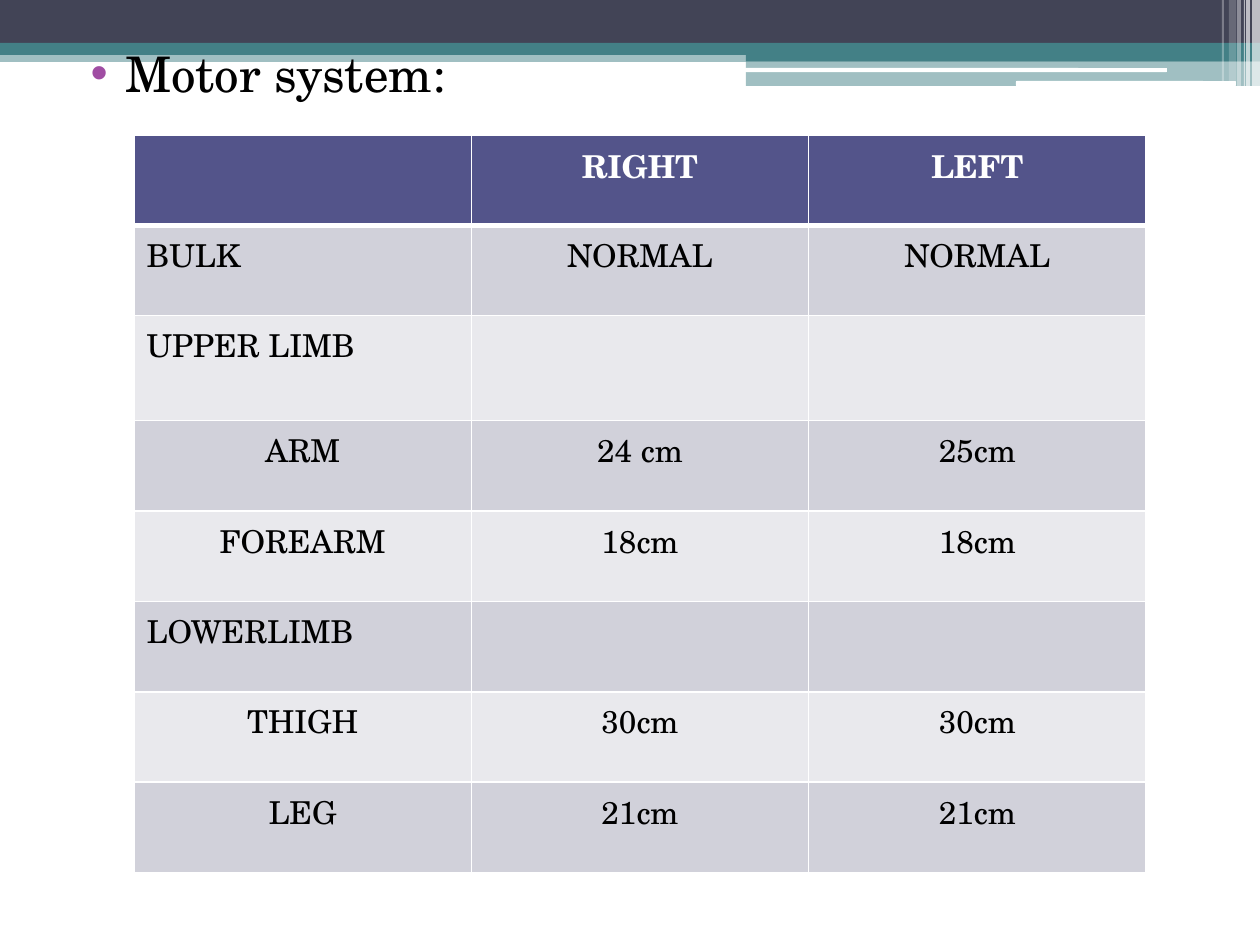
from lxml.etree import SubElement
from pptx import Presentation
from pptx.dml.color import RGBColor
from pptx.enum.shapes import MSO_SHAPE
from pptx.enum.text import PP_ALIGN
from pptx.oxml import parse_xml
from pptx.oxml.ns import nsdecls, qn
from pptx.util import Inches, Pt

PX = Inches(10) / 1260
FONT = "TeX Gyre Schola"
WHITE = RGBColor(0xFF, 0xFF, 0xFF)
BLACK = RGBColor(0x00, 0x00, 0x00)
SLATE = RGBColor(0x42, 0x44, 0x56)
TEAL = RGBColor(0x43, 0x80, 0x86)
PURPLE = RGBColor(0xA0, 0x4D, 0xA3)
INDIGO = RGBColor(0x53, 0x54, 0x8A)
BAND_DARK = RGBColor(0xD1, 0xD1, 0xDA)
BAND_LIGHT = RGBColor(0xE9, 0xE9, 0xED)

BARS = [
    (0, 50, 1260, 12, TEAL, 50),
    (0, 0, 1260, 43, SLATE, 100),
    (0, 43, 1260, 12, TEAL, 100),
    (746, 49, 514, 12, TEAL, 100),
    (746, 61, 514, 25, TEAL, 50),
]
GROOVES = [(745, 68, 422, 4), (1016, 81, 220, 5)]
STRIPES = [
    (1252, 8, 86, 65),
    (1246, 4, 86, 65),
    (1244, 1, 86, 60),
    (1237, 4, 86, 40),
    (1229, 7, 81, 20),
    (1222, 2, 81, 30),
]
MEASUREMENTS = [
    ("", "RIGHT", "LEFT"),
    ("BULK", "NORMAL", "NORMAL"),
    ("UPPER LIMB", "", ""),
    ("ARM", "24 cm", "25cm"),
    ("FOREARM", "18cm", "18cm"),
    ("LOWERLIMB", "", ""),
    ("THIGH", "30cm", "30cm"),
    ("LEG", "21cm", "21cm"),
]
LEFT_ALIGNED = {"BULK", "UPPER LIMB", "LOWERLIMB"}
TALL_ROW, TALL_HEIGHT = 2, 105


def px(length):
    """Turn px into EMU."""
    return round(length * PX)


def add_block(slide, box, color, opacity=100, preset=MSO_SHAPE.RECTANGLE):
    """Add a borderless block with the given opacity in percent."""
    block = slide.shapes.add_shape(preset, *map(px, box))
    block.shadow.inherit = False
    block.line.fill.background()
    block.fill.solid()
    block.fill.fore_color.rgb = color
    if opacity < 100:
        srgb = block.fill._xPr.find(".//" + qn("a:srgbClr"))
        SubElement(srgb, qn("a:alpha"), val=str(opacity * 1000))


def add_banner(slide, left, top):
    """Draw the layered bars, grooves and stripes across the top."""
    for x, y, width, height, color, opacity in BARS:
        add_block(slide, (left + x, top + y, width, height), color, opacity)
    for x, y, width, height in GROOVES:
        add_block(slide, (left + x, top + y, width, height), WHITE, preset=MSO_SHAPE.ROUNDED_RECTANGLE)
    for x, width, height, opacity in STRIPES:
        add_block(slide, (left + x, top, width, height), WHITE, opacity)


def add_run(paragraph, text, size, color, bold=False):
    """Append one formatted run."""
    run = paragraph.add_run()
    run.text = text
    run.font.name = FONT
    run.font.size = Pt(size)
    run.font.bold = bold
    run.font.color.rgb = color


def place_topic(slide, box):
    """Place the bulleted topic in the body placeholder, above the banner."""
    topic = slide.placeholders[1]
    slide.shapes._spTree.append(topic._element)
    topic.left, topic.top, topic.width, topic.height = map(px, box)
    paragraph = topic.text_frame.paragraphs[0]
    properties = paragraph._p.get_or_add_pPr()
    properties.set("marL", str(px(50)))
    properties.set("indent", str(px(-35)))
    bullet_color = SubElement(properties, qn("a:buClr"))
    SubElement(bullet_color, qn("a:srgbClr"), val=str(PURPLE))
    SubElement(properties, qn("a:buFont"), typeface="Arial")
    SubElement(properties, qn("a:buChar"), char="•")
    paragraph.space_before = Pt(0)
    add_run(paragraph, "Motor system:", 28, BLACK)


def set_borders(cell, bottom_width):
    """Give a cell white borders, with its own bottom width in points."""
    widths = {"lnL": 1, "lnR": 1, "lnT": 1, "lnB": bottom_width}
    for position, (side, width) in enumerate(widths.items()):
        border = parse_xml(
            f'<a:{side} {nsdecls("a")} w="{Pt(width)}"><a:solidFill>'
            f'<a:srgbClr val="{WHITE}"/></a:solidFill></a:{side}>'
        )
        cell._tc.get_or_add_tcPr().insert(position, border)


def add_measurements(slide, box):
    """Add the table of limb measurements, right against left."""
    count = len(MEASUREMENTS)
    frame = slide.shapes.add_table(count, len(MEASUREMENTS[0]), *map(px, box))
    table = frame.table
    row_height = (box[3] - TALL_HEIGHT) / (count - 1)
    for row, texts in enumerate(MEASUREMENTS):
        table.rows[row].height = px(TALL_HEIGHT if row == TALL_ROW else row_height)
        header = row == 0
        band = INDIGO if header else BAND_DARK if row % 2 else BAND_LIGHT
        for column, text in enumerate(texts):
            cell = table.cell(row, column)
            cell.fill.solid()
            cell.fill.fore_color.rgb = band
            set_borders(cell, 3 if header else 1)
            if text:
                paragraph = cell.text_frame.paragraphs[0]
                paragraph.alignment = PP_ALIGN.LEFT if text in LEFT_ALIGNED else PP_ALIGN.CENTER
                add_run(paragraph, text, 18, WHITE if header else BLACK, header)


def main():
    """Build and save the slide."""
    deck = Presentation()
    deck.slide_width, deck.slide_height = px(1260), px(945)
    slide = deck.slides.add_slide(deck.slide_layouts[1])
    title = slide.shapes.title._element
    title.getparent().remove(title)
    add_banner(slide, 0, 0)
    place_topic(slide, (63, 37, 1134, 808))
    add_measurements(slide, (134, 135, 1012, 738))
    deck.save("out.pptx")


if __name__ == "__main__":
    main()
